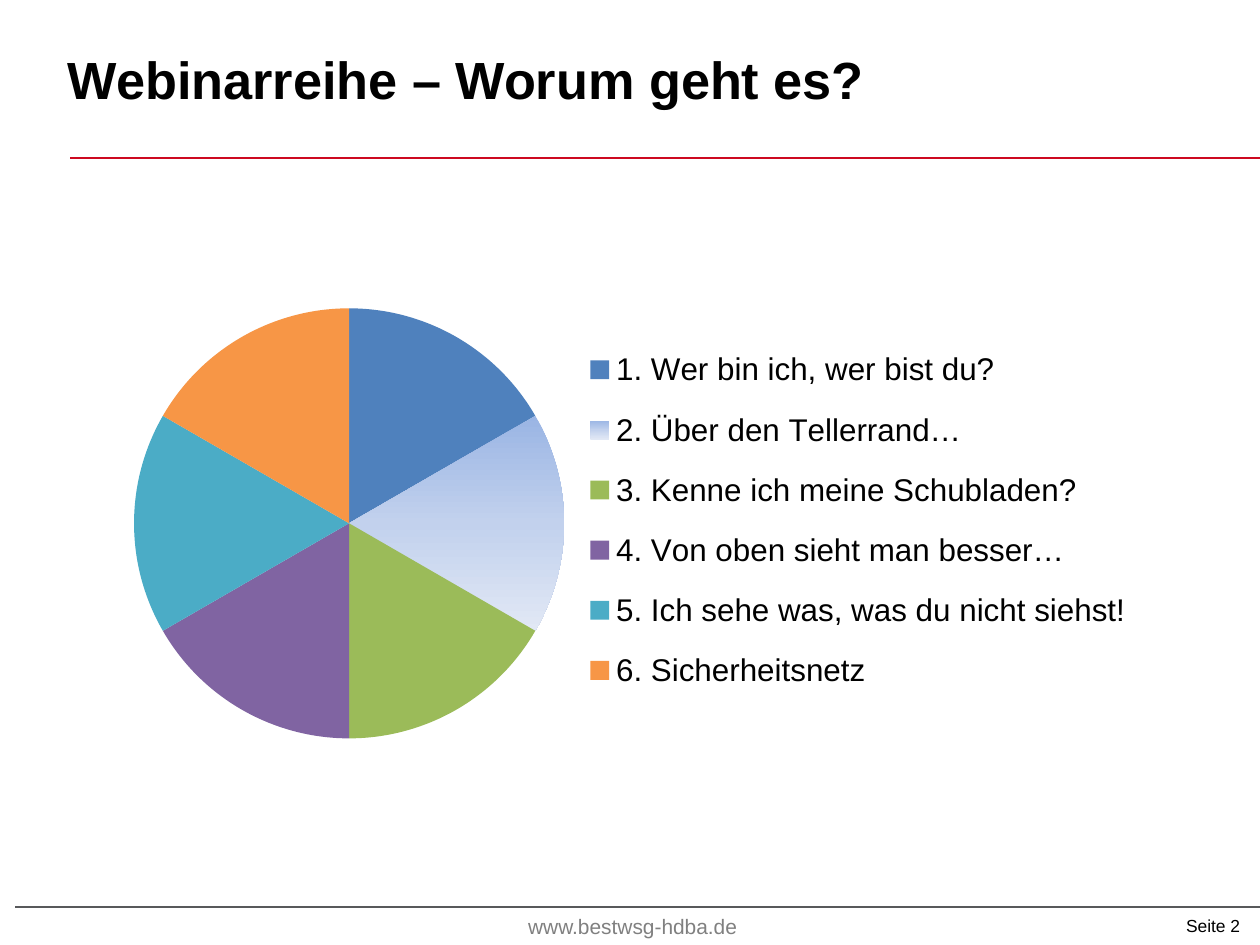
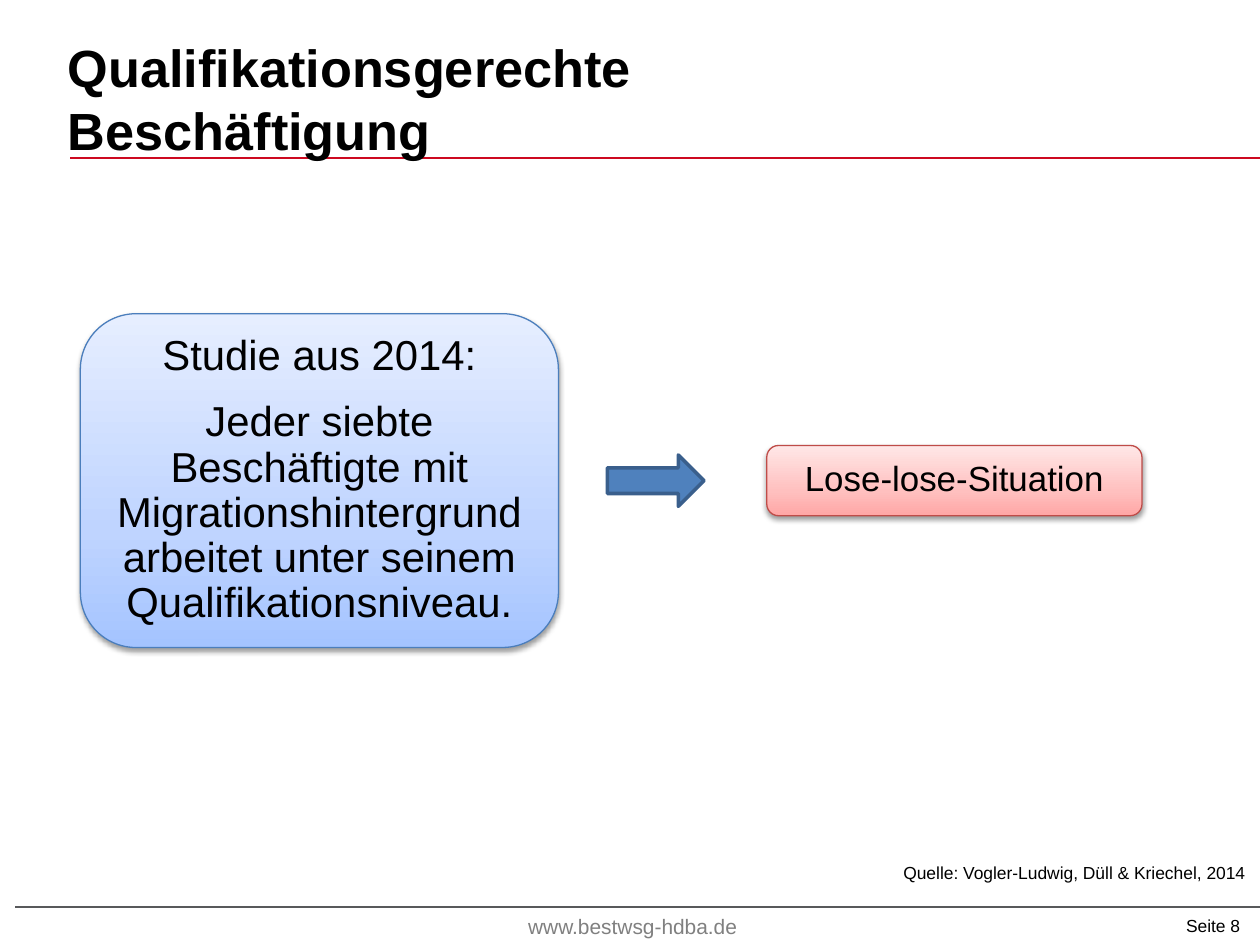
"""Build two webinar slides: a topic pie and a study finding."""
from lxml import etree
from pptx import Presentation
from pptx.chart.data import CategoryChartData
from pptx.dml.color import RGBColor
from pptx.enum.chart import XL_CHART_TYPE, XL_LEGEND_POSITION
from pptx.enum.shapes import MSO_CONNECTOR, MSO_SHAPE
from pptx.enum.text import MSO_ANCHOR, PP_ALIGN
from pptx.oxml.ns import qn
from pptx.util import Inches, Pt

BLACK = RGBColor(0x00, 0x00, 0x00)
GREY = RGBColor(0x80, 0x80, 0x80)
DARK = RGBColor(0x58, 0x59, 0x5B)
RED = RGBColor(0xCD, 0x09, 0x20)
BLUE = RGBColor(0x4F, 0x81, 0xBD)
NAVY = RGBColor(0x3A, 0x5F, 0x8C)
GREEN = RGBColor(0x9B, 0xBB, 0x59)
PURPLE = RGBColor(0x80, 0x64, 0xA2)
TEAL = RGBColor(0x4B, 0xAC, 0xC6)
ORANGE = RGBColor(0xF7, 0x96, 0x46)
BLUE_EDGE = RGBColor(0x4B, 0x7E, 0xBC)
RED_EDGE = RGBColor(0xBF, 0x4C, 0x48)
PIE_FADE = [(0, RGBColor(0x9A, 0xB5, 0xE4)), (50, RGBColor(0xC2, 0xD1, 0xED)),
            (100, RGBColor(0xE1, 0xE8, 0xF5))]
BLUE_FADE = [(0, RGBColor(0xA4, 0xC4, 0xFF)), (35, RGBColor(0xBF, 0xD4, 0xFF)),
             (100, RGBColor(0xE6, 0xEE, 0xFF))]
RED_FADE = [(0, RGBColor(0xFF, 0xA6, 0xA5)), (35, RGBColor(0xFF, 0xC0, 0xBF)),
            (100, RGBColor(0xFF, 0xE7, 0xE7))]

FONT = "Arial"
WIDE, HIGH = 10.04, 7.53
MID = 3.83
SITE = "www.bestwsg-hdba.de"
RULES = [(0.12, 7.23, DARK, 1.25), (0.56, 1.26, RED, 1)]

SHARE = 17
TOPICS = [
    ("1. Wer bin ich, wer bist du?", BLUE),
    ("2. Über den Tellerrand…", PIE_FADE),
    ("3. Kenne ich meine Schubladen?", GREEN),
    ("4. Von oben sieht man besser…", PURPLE),
    ("5. Ich sehe was, was du nicht siehst!", TEAL),
    ("6. Sicherheitsnetz", ORANGE),
]
PLOT = {"x": 0.01, "y": 0.18, "w": 0.42, "h": 0.68}
LEGEND = {"x": 0.44, "y": 0.21, "w": 0.55, "h": 0.61}

BOXES = [
    (0.64, 3.81, 2.66, BLUE_FADE, BLUE_EDGE, 24,
     ["Studie aus 2014:",
      "Jeder siebte Beschäftigte mit Migrationshintergrund "
      "arbeitet unter seinem Qualifikationsniveau."]),
    (6.11, 2.99, 0.56, RED_FADE, RED_EDGE, 20, ["Lose-lose-Situation"]),
]
SOURCE = "Quelle: Vogler-Ludwig, Düll & Kriechel, 2014"


def write(frame, lines, size, color=BLACK, align=PP_ALIGN.LEFT, bold=False, lead=0.9):
    """Fill a text frame with evenly styled paragraphs."""
    for i, line in enumerate(lines):
        para = frame.add_paragraph() if i else frame.paragraphs[0]
        para.text = line
        para.alignment = align
        para.line_spacing = lead
        if i:
            para.space_before = Pt(size / 2)
        for run in para.runs:
            font = run.font
            font.name, font.size, font.bold = FONT, Pt(size), bold
            font.color.rgb = color


def label(slide, left, top, wide, high, text, size, inset=True, wrap=False, **style):
    """Add a text box holding one paragraph."""
    frame = slide.shapes.add_textbox(
        Inches(left), Inches(top), Inches(wide), Inches(high)).text_frame
    frame.word_wrap = wrap
    if not inset:
        frame.margin_left = frame.margin_right = 0
        frame.margin_top = frame.margin_bottom = 0
    write(frame, [text], size, **style)


def fade(fill, stops, angle):
    """Give a fill a linear gradient with any number of stops."""
    fill.gradient()
    fill.gradient_angle = angle
    group = fill._xPr.find(qn("a:gradFill")).find(qn("a:gsLst"))
    for old in list(group):
        group.remove(old)
    for pos, color in stops:
        stop = etree.SubElement(group, qn("a:gs"), pos=str(pos * 1000))
        etree.SubElement(stop, qn("a:srgbClr"), val=str(color))


def shade(shape):
    """Add a soft shadow below a shape."""
    shape.shadow.inherit = False
    effects = shape._element.spPr.find(qn("a:effectLst"))
    outer = etree.SubElement(
        effects, qn("a:outerShdw"), blurRad=str(int(Pt(3.1))), dist=str(int(Pt(1.6))),
        dir="5400000", rotWithShape="0")
    color = etree.SubElement(outer, qn("a:srgbClr"), val=str(BLACK))
    etree.SubElement(color, qn("a:alpha"), val="38000")


def place(part, spots, inner=False):
    """Set a manual layout on a chart part."""
    layout = part.find(qn("c:layout"))
    if layout is None:
        layout = etree.Element(qn("c:layout"))
        before = part.find(qn("c:legendPos"))
        part.insert(0 if before is None else part.index(before) + 1, layout)
    for old in list(layout):
        layout.remove(old)
    manual = etree.SubElement(layout, qn("c:manualLayout"))
    if inner:
        etree.SubElement(manual, qn("c:layoutTarget"), val="inner")
    for axis in "xy":
        etree.SubElement(manual, qn(f"c:{axis}Mode"), val="edge")
    for key, value in spots.items():
        etree.SubElement(manual, qn(f"c:{key}"), val=str(value))


def base(deck, title, top, page):
    """Add a slide with the shared rules, footer and title."""
    slide = deck.slides.add_slide(deck.slide_layouts[6])
    for left, y, color, width in RULES:
        rule = slide.shapes.add_connector(
            MSO_CONNECTOR.STRAIGHT, Inches(left), Inches(y), Inches(WIDE), Inches(y))
        rule.line.color.rgb = color
        rule.line.width = Pt(width)
        etree.SubElement(rule._element.spPr, qn("a:effectLst"))
    label(slide, 8.97, 7.24, 1.01, 0.26, f"Seite {page}", 10, wrap=True,
          align=PP_ALIGN.RIGHT, lead=1)
    label(slide, 4.11, 7.25, 1.88, 0.28, SITE, 12, color=GREY)
    label(slide, 0.54, top, 9.02, 0.89, title, 30, inset=False, wrap=True,
          bold=True, lead=1)
    return slide


def topics(deck):
    """Build the pie of webinar topics."""
    slide = base(deck, "Webinarreihe – Worum geht es?", 0.38, 2)
    data = CategoryChartData(number_format="0")
    data.categories = [name for name, _ in TOPICS]
    data.add_series("Series 1", [SHARE] * len(TOPICS))
    chart = slide.shapes.add_chart(
        XL_CHART_TYPE.PIE, Inches(0.98), Inches(1.55), Inches(8.19), Inches(5.04),
        data).chart
    chart.has_title = False
    chart.font.name, chart.font.size = FONT, Pt(18)
    chart.font.color.rgb = BLACK
    chart.has_legend = True
    chart.legend.position = XL_LEGEND_POSITION.RIGHT
    chart.legend.include_in_layout = False
    plot = chart.plots[0]
    plot.vary_by_categories = True
    for i, (_, color) in enumerate(TOPICS):
        look = plot.series[0].points[i].format
        look.line.fill.background()
        if isinstance(color, list):
            fade(look.fill, color, 270)
        else:
            look.fill.solid()
            look.fill.fore_color.rgb = color
    place(chart._chartSpace.find(".//" + qn("c:plotArea")), PLOT, True)
    place(chart._chartSpace.find(".//" + qn("c:legend")), LEGEND)


def study(deck):
    """Build the study finding and its outcome."""
    slide = base(deck, "Qualifikationsgerechte\vBeschäftigung", 0.28, 8)
    for left, wide, high, stops, edge, size, lines in BOXES:
        box = slide.shapes.add_shape(
            MSO_SHAPE.ROUNDED_RECTANGLE, Inches(left), Inches(MID - high / 2),
            Inches(wide), Inches(high))
        fade(box.fill, stops, 90)
        box.line.color.rgb = edge
        box.line.width = Pt(0.75)
        shade(box)
        box.text_frame.word_wrap = True
        box.text_frame.vertical_anchor = MSO_ANCHOR.MIDDLE
        write(box.text_frame, lines, size, align=PP_ALIGN.CENTER)
    arrow = slide.shapes.add_shape(
        MSO_SHAPE.RIGHT_ARROW, Inches(4.84), Inches(MID - 0.41 / 2),
        Inches(0.77), Inches(0.41))
    arrow.shadow.inherit = False
    arrow.fill.solid()
    arrow.fill.fore_color.rgb = BLUE
    arrow.line.color.rgb = NAVY
    arrow.line.width = Pt(2)
    label(slide, 7.1, 6.84, 2.94, 0.26, SOURCE, 10)


def main():
    """Create and save the deck."""
    deck = Presentation()
    deck.slide_width, deck.slide_height = Inches(WIDE), Inches(HIGH)
    topics(deck)
    study(deck)
    deck.save("out.pptx")


if __name__ == "__main__":
    main()
